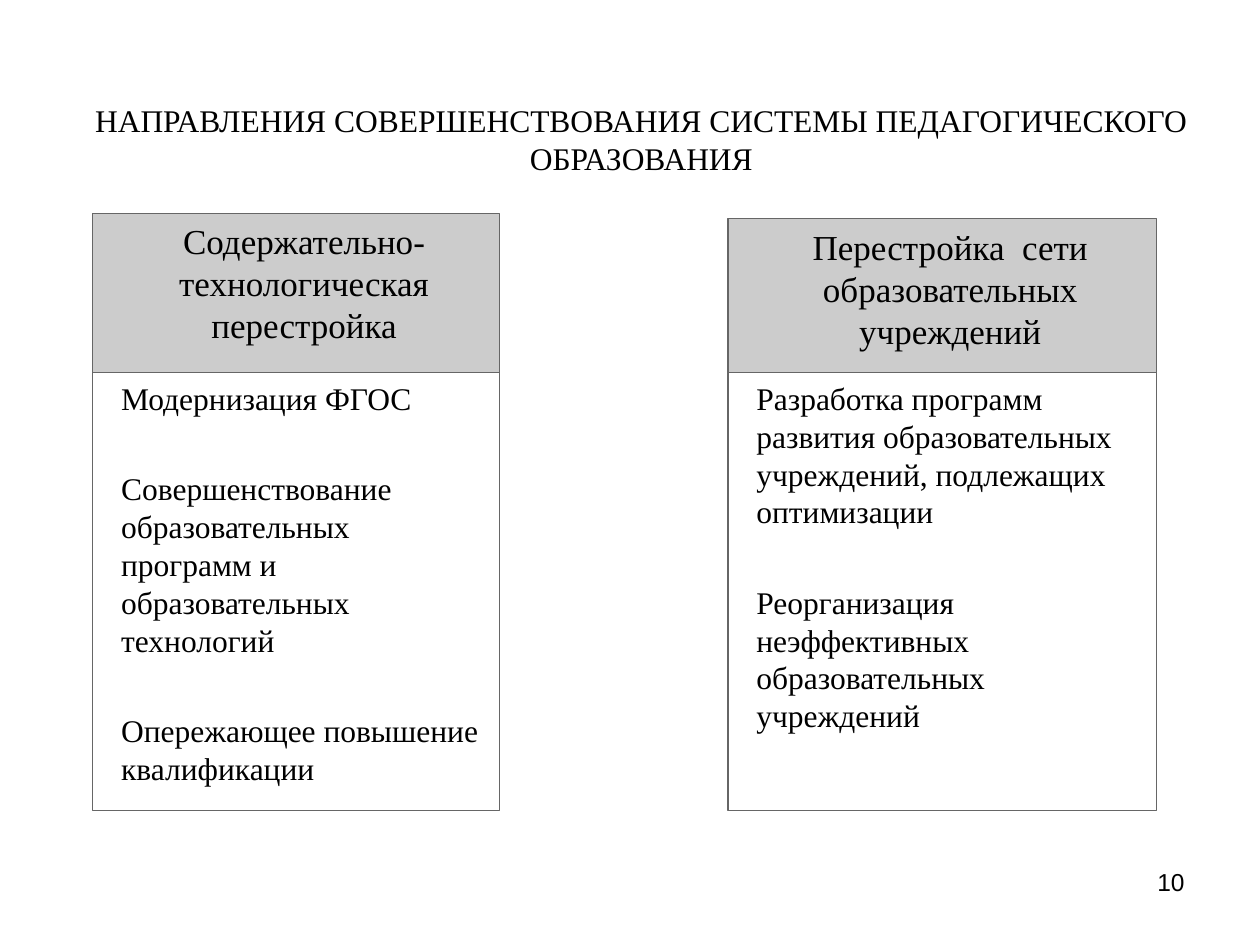
from pptx import Presentation
from pptx.dml.color import RGBColor
from pptx.enum import text
from pptx.oxml.xmlchemy import OxmlElement
from pptx.util import Pt

COLORS = {"text": "000000", "header": "CCCCCC", "border": "666666"}
SERIF = "Times New Roman"
BODY_TOP, BODY_HEIGHT = 213, 250
TITLE = "НАПРАВЛЕНИЯ СОВЕРШЕНСТВОВАНИЯ СИСТЕМЫ ПЕДАГОГИЧЕСКОГО ОБРАЗОВАНИЯ"
# header placeholder index, left, width, header top, header, items
COLUMNS = [
    (1, 53, 232.5, 122, "Содержательно-технологическая перестройка",
     ["Модернизация ФГОС",
      "Совершенствование образовательных программ и образовательных технологий",
      "Опережающее повышение квалификации"]),
    (3, 416, 245, 125, "Перестройка  сети образовательных учреждений",
     ["Разработка программ развития образовательных учреждений, подлежащих оптимизации",
      "Реорганизация неэффективных образовательных учреждений"]),
]


def color(name):
    return RGBColor.from_string(COLORS[name])


def place(sp, left, top, width, height):
    box = {"left": left, "top": top, "width": width, "height": height}
    for name, value in box.items():
        setattr(sp, name, Pt(value))


def write(sp, lines, size, align, anchor=text.MSO_ANCHOR.TOP, font=SERIF, gap=0):
    tf = sp.text_frame
    frame = {"word_wrap": True, "auto_size": text.MSO_AUTO_SIZE.NONE,
             "vertical_anchor": anchor}
    for name, value in frame.items():
        setattr(tf, name, value)
    for i, line in enumerate(lines):
        p = tf.paragraphs[0] if i == 0 else tf.add_paragraph()
        p.alignment = align
        p.space_before = Pt(gap if i else 0)
        r = p.add_run()
        r.text = line
        r.font.color.rgb = color("text")
        style = {"name": font, "size": Pt(size), "bold": False}
        for name, value in style.items():
            setattr(r.font, name, value)


def add_panel(sp, box, lines, size, align, fill=None, gap=0):
    """Turn a body placeholder into a bordered box without bullets."""
    place(sp, *box)
    if fill:
        sp.fill.solid()
        sp.fill.fore_color.rgb = color(fill)
    sp.line.color.rgb = color("border")
    sp.line.width = Pt(0.75)
    write(sp, lines, size, align, gap=gap)
    for p in sp.text_frame.paragraphs:
        pPr = p._p.get_or_add_pPr()
        pPr.set("marL", str(Pt(9)))
        pPr.set("indent", "0")
        pPr.append(OxmlElement("a:buNone"))


def add_column(s, index, left, width, top, header, items):
    add_panel(s.placeholders[index], (left, top, width, BODY_TOP - top),
              [header], 20, text.PP_ALIGN.CENTER, fill="header")
    add_panel(s.placeholders[index + 1], (left, BODY_TOP, width, BODY_HEIGHT),
              items, 18, text.PP_ALIGN.LEFT, gap=30)


def main():
    prs = Presentation()
    prs.slide_width, prs.slide_height = Pt(720), Pt(540)
    s = prs.slides.add_slide(prs.slide_layouts.get_by_name("Comparison"))

    place(s.shapes.title, 42.5, 36.5, 648, 86)
    write(s.shapes.title, [TITLE], 18, text.PP_ALIGN.CENTER, text.MSO_ANCHOR.MIDDLE)

    for column in COLUMNS:
        add_column(s, *column)

    number = s.shapes.add_textbox(Pt(516), Pt(492), Pt(168), Pt(37.5))
    write(number, ["10"], 14, text.PP_ALIGN.RIGHT, font="Arial")
    prs.save("out.pptx")


if __name__ == "__main__":
    main()
